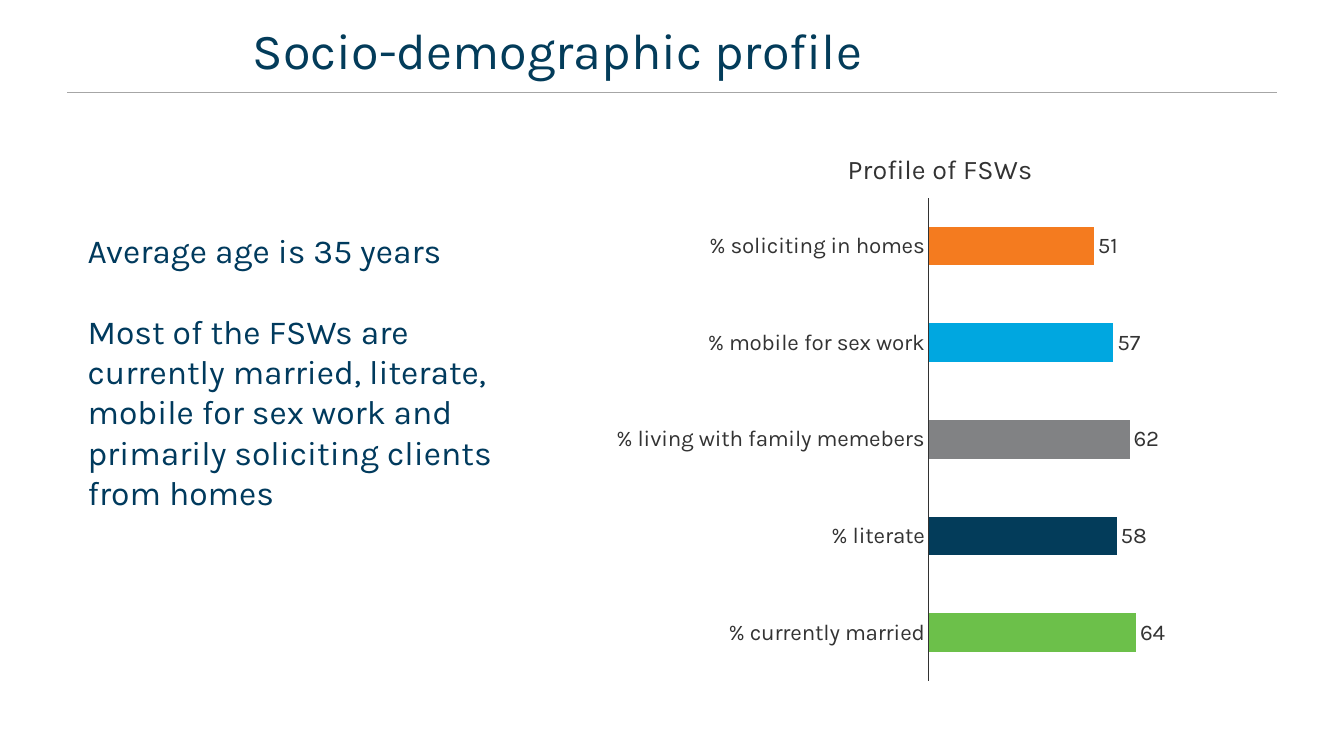
from dataclasses import dataclass

from lxml import etree
from pptx import Presentation
from pptx import util as u
from pptx.chart.data import CategoryChartData
from pptx.dml.color import RGBColor
from pptx.enum import chart as ch, shapes, text
from pptx.oxml import parse_xml
from pptx.oxml.ns import nsdecls, qn

W, H = u.Inches(13.33), u.Inches(7.5)
FONT = "Karla"
COLORS = {
    "navy": "033C5A", "body": "003A5D", "rule": "A6A6A6", "label": "333333",
    "axis": "323232", "green": "6CC04A", "gray": "818284", "blue": "00A7E0",
    "orange": "F47B1F",
}


@dataclass(frozen=True)
class Box:
    """Place and size in percent of the slide's width and height."""
    x: float
    y: float
    w: float
    h: float

    def emu(self) -> tuple:
        return tuple(int(v * side / 100) for v, side in
                     ((self.x, W), (self.y, H), (self.w, W), (self.h, H)))


@dataclass(frozen=True)
class Bar:
    """One share of the profile, listed from the bottom up."""
    label: str
    value: int
    color: str


HEADING = Box(18.08, 1.87, 76.2, 9.47)
RULE = Box(5, 12.27, 90, 0)
MESSAGE = Box(5.78, 14.27, 34.8, 69.6)
CHART = Box(45, 16.4, 49.2, 75.2)
BARS = [
    Bar("% currently married", 64, "green"),
    Bar("% literate", 58, "navy"),
    Bar("% living with family memebers", 62, "gray"),
    Bar("% mobile for sex work", 57, "blue"),
    Bar("% soliciting in homes", 51, "orange"),
]


def rgb(name: str) -> RGBColor:
    return RGBColor.from_string(COLORS[name])


def style(font, size: float, color: str) -> None:
    font.name, font.size, font.bold = FONT, u.Pt(size), False
    font.color.rgb = rgb(color)


def add_text(s, box: Box, *paras: str, size: float, color: str,
             anchor=text.MSO_ANCHOR.TOP, gap: float = 0) -> None:
    tf = s.shapes.add_textbox(*box.emu()).text_frame
    tf.word_wrap, tf.vertical_anchor = True, anchor
    for i, line in enumerate(paras):
        p = tf.paragraphs[0] if i == 0 else tf.add_paragraph()
        if i:
            p.space_before = u.Pt(gap)
        r = p.add_run()
        r.text = line
        style(r.font, size, color)


def add_rule(s, box: Box) -> None:
    x, y, w, h = box.emu()
    c = s.shapes.add_connector(shapes.MSO_CONNECTOR.STRAIGHT, x, y, x + w, y + h)
    c.line.color.rgb, c.line.width = rgb("rule"), u.Pt(1)
    etree.SubElement(c._element.spPr, qn("a:effectLst"))


def layout(target: str, **place: float):
    """Build a manual chart layout from shares of the chart's size."""
    inner = '<c:layoutTarget val="inner"/>' if target == "plot" else ""
    modes = "".join(f'<c:{k}Mode val="edge"/>' for k in "xy")
    sizes = "".join(f'<c:{k} val="{v}"/>' for k, v in place.items())
    return parse_xml(f'<c:layout {nsdecls("c")}><c:manualLayout>{inner}{modes}'
                     f'{sizes}</c:manualLayout></c:layout>')


def set_layout(parent, new, index: int) -> None:
    for old in parent.findall(qn("c:layout")):
        parent.remove(old)
    parent.insert(index, new)


def add_profile(s, box: Box, bars: list[Bar]) -> None:
    data = CategoryChartData()
    data.categories = [b.label for b in bars]
    data.add_series("Series 1", [b.value for b in bars])
    chart = s.shapes.add_chart(ch.XL_CHART_TYPE.BAR_CLUSTERED, *box.emu(), data).chart
    style(chart.font, 16, "label")
    chart.has_legend = False
    chart.has_title = True
    p = chart.chart_title.text_frame.paragraphs[0]
    r = p.add_run()
    r.text = "Profile of FSWs"
    style(r.font, 19.2, "label")
    chart.chart_title.include_in_layout = False
    set_layout(chart.chart_title._element, layout("title", x=0.36, y=0.04), 1)

    cat, val = chart.category_axis, chart.value_axis
    cat.major_tick_mark = cat.minor_tick_mark = ch.XL_TICK_MARK.NONE
    cat.format.line.color.rgb, cat.format.line.width = rgb("axis"), u.Pt(0.75)
    style(cat.tick_labels.font, 16, "label")
    val.minimum_scale, val.maximum_scale = 0, 100
    val.has_major_gridlines = val.visible = False

    plot = chart.plots[0]
    plot.gap_width, plot.overlap, plot.vary_by_categories = 150, -25, False
    set_layout(chart._chartSpace.chart.plotArea,
               layout("plot", x=0.49, y=0.13, w=0.49, h=0.85), 0)
    series = plot.series[0]
    for i, b in enumerate(bars):
        fill = series.points[i].format.fill
        fill.solid()
        fill.fore_color.rgb = rgb(b.color)
    labels = series.data_labels
    labels.show_value = True
    labels.position = ch.XL_LABEL_POSITION.OUTSIDE_END
    style(labels.font, 16, "label")


def main() -> None:
    prs = Presentation()
    prs.slide_width, prs.slide_height = W, H
    s = prs.slides.add_slide(prs.slide_layouts[6])
    add_rule(s, RULE)
    add_text(s, MESSAGE, "Average age is 35 years",
             "Most of the FSWs are currently married, literate, mobile for "
             "sex work and primarily soliciting clients from homes",
             size=24, color="body", anchor=text.MSO_ANCHOR.MIDDLE, gap=28.8)
    add_profile(s, CHART, BARS)
    add_text(s, HEADING, "Socio-demographic profile", size=36, color="navy")
    prs.save("out.pptx")


if __name__ == "__main__":
    main()
